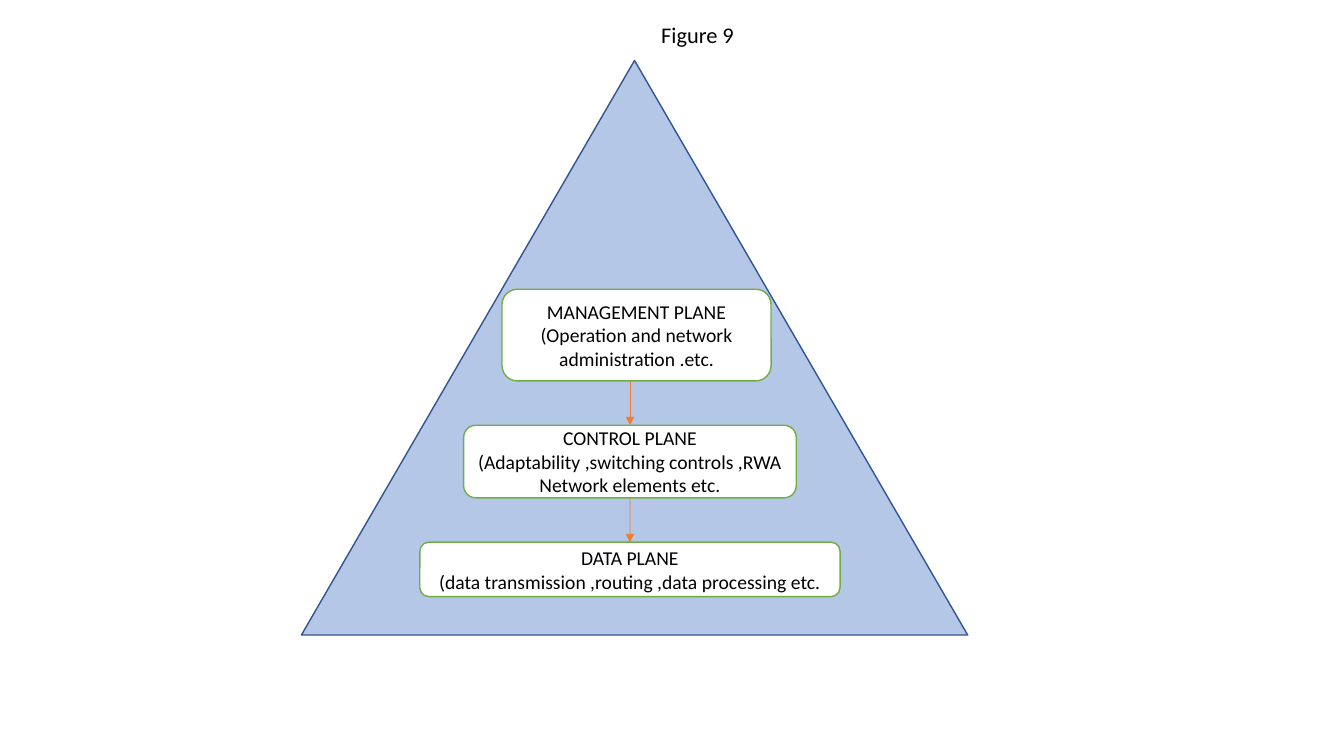
from lxml.etree import SubElement
from pptx import Presentation
from pptx.dml.color import RGBColor
from pptx.enum.shapes import MSO_CONNECTOR, MSO_SHAPE
from pptx.enum.text import MSO_ANCHOR, MSO_AUTO_SIZE, PP_ALIGN
from pptx.oxml.ns import qn
from pptx.util import Pt

COLORS = {"back": "B4C7E7", "edge": "325491", "plane": "FFFFFF",
          "rim": "70AD47", "arrow": "ED7D31", "text": "000000"}
GAP = 31.7
PLANES = [
    ("MANAGEMENT PLANE\n(Operation and network administration .etc.", 192.2, 65.5, 4.7),
    ("CONTROL PLANE\n(Adaptability ,switching controls ,RWA Network elements etc.", 237.6, 51.8, 0),
    ("DATA PLANE\n(data transmission ,routing ,data processing etc.", 300.2, 38.9, 0),
]


def color(name):
    """Return the named colour."""
    return RGBColor.from_string(COLORS[name])


def write(shape, text, size):
    """Write centred text in a shape."""
    frame = shape.text_frame
    frame.text = text
    frame.word_wrap = True
    for para in frame.paragraphs:
        para.alignment = PP_ALIGN.CENTER
        for run in para.runs:
            run.font.name = "Calibri"
            run.font.size = Pt(size)
            run.font.color.rgb = color("text")


def add_form(slide, kind, box, fill, line):
    """Add a filled, outlined shape in a box."""
    shape = slide.shapes.add_shape(kind, *map(Pt, box))
    shape.shadow.inherit = False
    shape.fill.solid()
    shape.fill.fore_color.rgb = color(fill)
    shape.line.color.rgb = color(line)
    shape.line.width = Pt(1)
    return shape


def add_arrow(slide, axis, top, last, plane):
    """Add a down arrow that ends on a plane, joined where sides meet mid-way."""
    arrow = slide.shapes.add_connector(
        MSO_CONNECTOR.STRAIGHT, Pt(axis), Pt(top - GAP), Pt(axis), Pt(top))
    if last.left + last.width // 2 == plane.left + plane.width // 2:
        arrow.begin_connect(last, 2)
    arrow.end_connect(plane, 0)
    arrow.line.color.rgb = color("arrow")
    arrow.line.width = Pt(0.5)
    SubElement(arrow.line._get_or_add_ln(), qn("a:tailEnd"), type="triangle")
    SubElement(arrow._element.spPr, qn("a:effectLst"))


def add_title(slide, box):
    """Add the figure title in a box."""
    title = slide.shapes.add_textbox(*map(Pt, box))
    write(title, "Figure 9", 16)
    title.text_frame.auto_size = MSO_AUTO_SIZE.SHAPE_TO_FIT_TEXT


def add_stack(slide, box):
    """Add the triangle in a box, with the planes stacked inside it."""
    add_form(slide, MSO_SHAPE.FLOWCHART_EXTRACT, box, "back", "edge")
    left, top, wide, high = box
    axis = left + wide / 2 - 3.25
    top += 163.4
    last = None
    for text, wide, high, shift in PLANES:
        place = (axis + shift - wide / 2, top, wide, high)
        plane = add_form(slide, MSO_SHAPE.ROUNDED_RECTANGLE, place, "plane", "rim")
        write(plane, text, 14)
        plane.text_frame.vertical_anchor = MSO_ANCHOR.MIDDLE
        if last is not None:
            add_arrow(slide, axis, top, last, plane)
        last = plane
        top += high + GAP


def main():
    """Build and save the slide."""
    deck = Presentation()
    deck.slide_width, deck.slide_height = Pt(960), Pt(540)
    slide = deck.slides.add_slide(deck.slide_layouts[6])
    add_stack(slide, (215.3, 43.2, 475.9, 410.4))
    add_title(slide, (424.8, 11.5, 146.9, 26.6))
    deck.save("out.pptx")


if __name__ == "__main__":
    main()
